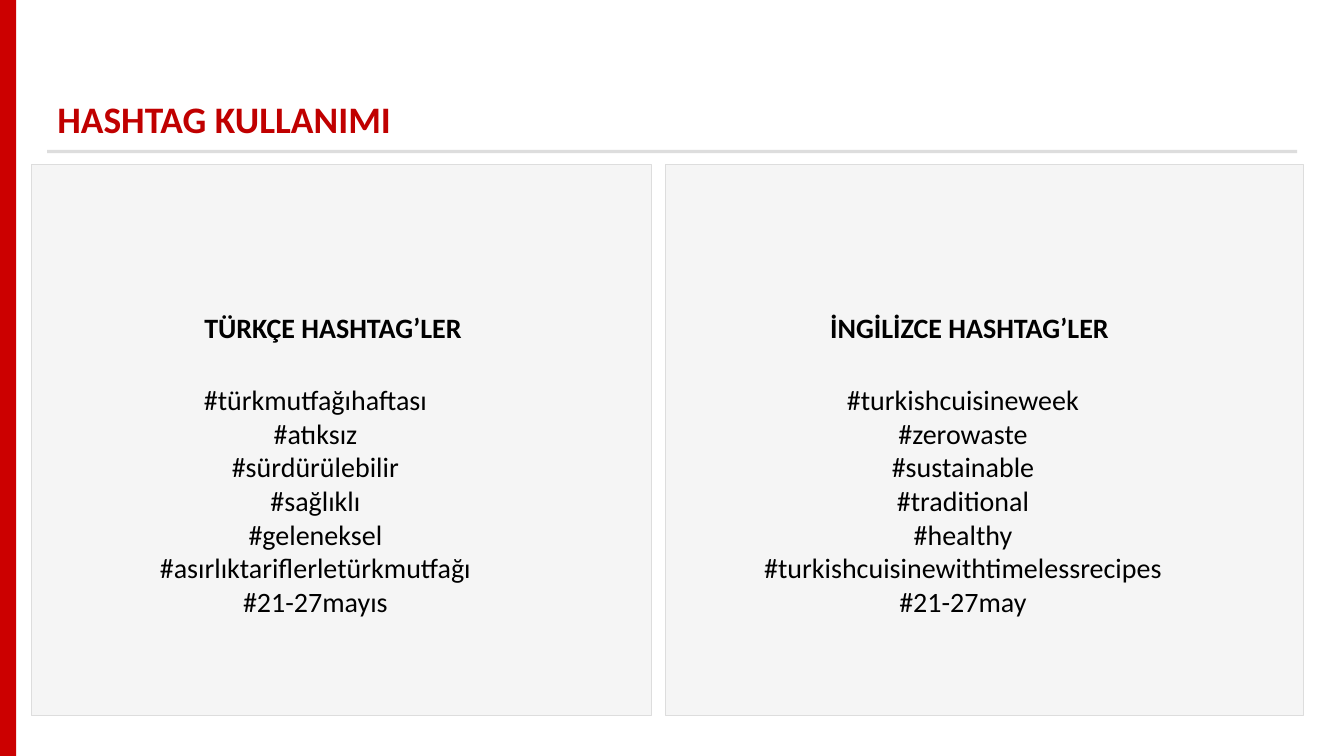
import dataclasses

import pptx
import pptx.dml.color
import pptx.enum.shapes
import pptx.enum.text
import pptx.util

Cm = pptx.util.Cm
RGB = pptx.dml.color.RGBColor.from_string
ALIGN = pptx.enum.text.PP_ALIGN


@dataclasses.dataclass(frozen=True)
class Theme:
    font: str = "Calibri"
    accent: str = "CC0000"
    title: str = "C00000"
    rule: str = "DDDDDD"
    panel: str = "F5F5F5"
    text: str = "000000"
    title_size: float = 26.7
    body_size: float = 20


THEME = Theme()

# Panel left and width, then offset and width of its heading and its list, in cm
PANELS = [
    {
        "box": (0.79, 15.62),
        "heading": (4.11, 8.69, ["TÜRKÇE HASHTAG’LER"]),
        "hashtags": (1.32, 11.68, [
            "#türkmutfağıhaftası", "#atıksız", "#sürdürülebilir", "#sağlıklı",
            "#geleneksel", "#asırlıktariflerletürkmutfağı", "#21-27mayıs",
        ]),
    },
    {
        "box": (16.76, 16.08),
        "heading": (3.91, 8.03, ["İNGİLİZCE HASHTAG’LER"]),
        "hashtags": (1.91, 11.2, [
            "#turkishcuisineweek", "#zerowaste", "#sustainable", "#traditional",
            "#healthy", "#turkishcuisinewithtimelessrecipes", "#21-27may",
        ]),
    },
]


def add_rectangle(slide, left, top, width, height, fill, line=None):
    shape = slide.shapes.add_shape(
        pptx.enum.shapes.MSO_SHAPE.RECTANGLE,
        Cm(left), Cm(top), Cm(width), Cm(height))
    shape.shadow.inherit = False
    shape.fill.solid()
    shape.fill.fore_color.rgb = RGB(fill)
    if line:
        shape.line.color.rgb = RGB(line)
        shape.line.width = pptx.util.Pt(0.5)
    else:
        shape.line.fill.background()


def write_lines(shape, lines, size, color, bold, align):
    frame = shape.text_frame
    frame.word_wrap = True
    frame.auto_size = pptx.enum.text.MSO_AUTO_SIZE.NONE
    frame.vertical_anchor = pptx.enum.text.MSO_ANCHOR.TOP
    frame.text = "\n".join(lines)
    for paragraph in frame.paragraphs:
        paragraph.alignment = align
        paragraph.line_spacing = 1.0
        for run in paragraph.runs:
            run.font.name = THEME.font
            run.font.size = pptx.util.Pt(size)
            run.font.bold = bold
            run.font.color.rgb = RGB(color)


def add_text(slide, left, top, width, height, lines, bold, align):
    box = slide.shapes.add_textbox(Cm(left), Cm(top), Cm(width), Cm(height))
    write_lines(box, lines, THEME.body_size, THEME.text, bold, align)


def add_header(slide, left, top, width, text):
    """Place the slide title with the grey rule beneath it."""
    title = slide.shapes.title
    title.left, title.top = Cm(left), Cm(top)
    title.width, title.height = Cm(width), Cm(1.4)
    write_lines(title, [text], THEME.title_size, THEME.title, True, ALIGN.LEFT)
    add_rectangle(slide, left, top + 1.49, width, 0.08, THEME.rule)


def add_hashtag_panel(slide, left, top, width, height, heading, hashtags):
    add_rectangle(slide, left, top, width, height, THEME.panel, THEME.rule)
    offset, text_width, lines = heading
    add_text(slide, left + offset, top + 3.56, text_width, 1.12, lines,
             True, ALIGN.LEFT)
    offset, text_width, lines = hashtags
    add_text(slide, left + offset, top + 5.38, text_width, 6.25, lines,
             False, ALIGN.CENTER)


def main():
    presentation = pptx.Presentation()
    presentation.slide_width = Cm(33.87)
    presentation.slide_height = Cm(19.05)
    slide = presentation.slides.add_slide(presentation.slide_layouts[5])
    add_rectangle(slide, 0, 0, 0.41, 19.05, THEME.accent)
    add_header(slide, 1.19, 2.29, 31.5, "HASHTAG KULLANIMI")
    for panel in PANELS:
        left, width = panel["box"]
        add_hashtag_panel(slide, left, 4.14, width, 13.89,
                          panel["heading"], panel["hashtags"])
    presentation.save("out.pptx")


if __name__ == "__main__":
    main()
